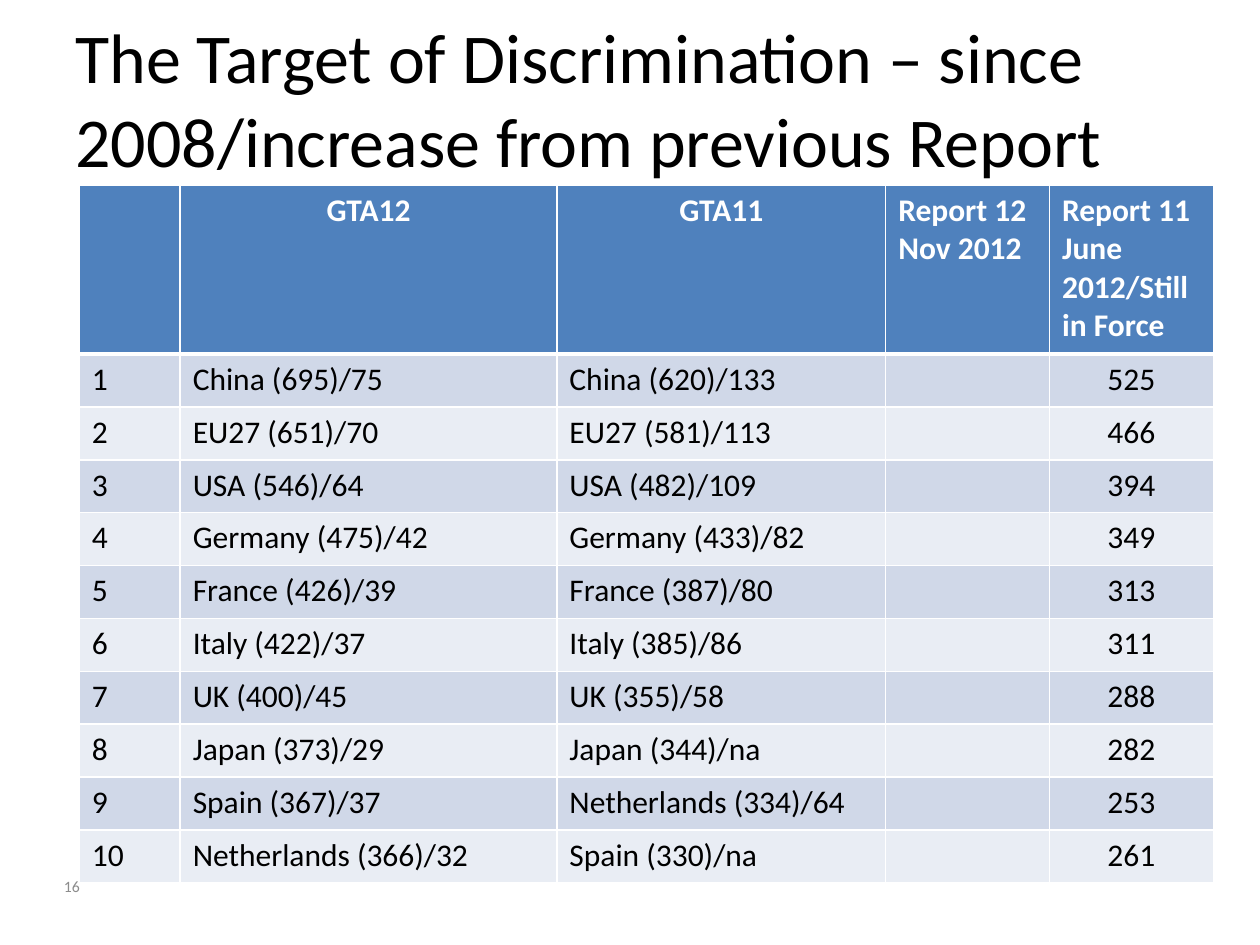
from lxml import etree
from pptx import Presentation
from pptx import util as u
from pptx.dml.color import RGBColor
from pptx.enum import text
from pptx.oxml.ns import qn

TITLE = "The Target of Discrimination – since 2008/increase from previous Report"
PAGE_NUMBER = "16"
HEADINGS = ["", "GTA12", "GTA11", "Report 12\nNov 2012",
            "Report 11 June 2012/Still in Force"]
TARGETS = [  # GTA12, GTA11, still in force
    ("China (695)/75", "China (620)/133", 525),
    ("EU27 (651)/70", "EU27 (581)/113", 466),
    ("USA (546)/64", "USA (482)/109", 394),
    ("Germany (475)/42", "Germany (433)/82", 349),
    ("France (426)/39", "France (387)/80", 313),
    ("Italy (422)/37", "Italy (385)/86", 311),
    ("UK (400)/45", "UK (355)/58", 288),
    ("Japan (373)/29", "Japan (344)/na", 282),
    ("Spain (367)/37", "Netherlands (334)/64", 253),
    ("Netherlands (366)/32", "Spain (330)/na", 261),
]
COLORS = {"text": "000000", "heading": "FFFFFF", "border": "FFFFFF",
          "header": "4F81BD", "odd": "D0D8E8", "even": "E9EDF4",
          "number": "8C8C8C"}
COLUMN_WIDTHS = [0.8, 2.99, 2.61, 1.3, 1.3]
HEADER_HEIGHT, ROW_HEIGHT = 1.34, 0.42
HEADING_CENTERED, BODY_CENTERED = {1, 2}, {4}
CENTER = text.PP_ALIGN.CENTER


def write(frame, content, size=18, color="text", bold=False, align=None):
    frame.word_wrap = True
    frame.text = content
    for paragraph in frame.paragraphs:
        paragraph.alignment = align
        font = paragraph.font
        font.name, font.size, font.bold = "Calibri", u.Pt(size), bold
        font.color.rgb = RGBColor.from_string(COLORS[color])
        for run in paragraph.runs:
            run.font.name, run.font.size, run.font.bold = "Calibri", u.Pt(size), bold
            run.font.color.rgb = RGBColor.from_string(COLORS[color])


def add_label(slide, box, content, **style):
    label = slide.shapes.add_textbox(*map(u.Inches, box))
    label.text_frame.vertical_anchor = text.MSO_ANCHOR.MIDDLE
    write(label.text_frame, content, **style)


def set_borders(cell, **widths):
    """Draw the L, R, T and B borders, 1 pt unless a width is given."""
    properties = cell._tc.get_or_add_tcPr()
    for place, side in enumerate("LRTB"):
        line = etree.Element(qn(f"a:ln{side}"), w=str(u.Pt(widths.get(side, 1))))
        fill = etree.SubElement(line, qn("a:solidFill"))
        etree.SubElement(fill, qn("a:srgbClr"), val=COLORS["border"])
        properties.insert(place, line)


def add_target_table(slide):
    rows = [HEADINGS] + [(str(rank), now, before, "", str(in_force))
                         for rank, (now, before, in_force) in enumerate(TARGETS, 1)]
    heights = [HEADER_HEIGHT] + [ROW_HEIGHT] * len(TARGETS)
    box = (0.63, 1.47, sum(COLUMN_WIDTHS), sum(heights))
    table = slide.shapes.add_table(len(rows), len(HEADINGS),
                                   *map(u.Inches, box)).table
    for column, width in zip(table.columns, COLUMN_WIDTHS):
        column.width = u.Inches(width)
    for r, (row, height) in enumerate(zip(rows, heights)):
        table.rows[r].height = u.Inches(height)
        is_header = r == 0
        band = "header" if is_header else "odd" if r % 2 else "even"
        centered = HEADING_CENTERED if is_header else BODY_CENTERED
        for c, content in enumerate(row):
            cell = table.cell(r, c)
            write(cell.text_frame, content, bold=is_header,
                  color="heading" if is_header else "text",
                  align=CENTER if c in centered else None)
            cell.fill.solid()
            cell.fill.fore_color.rgb = RGBColor.from_string(COLORS[band])
            set_borders(cell, T=3 if r == 1 else 1, B=3 if is_header else 1)


def main():
    deck = Presentation()
    deck.slide_width, deck.slide_height = u.Inches(10), u.Inches(7.5)
    slide = deck.slides.add_slide(deck.slide_layouts[6])
    add_label(slide, (0.5, 0, 9, 1.55), TITLE, size=40)
    add_target_table(slide)
    add_label(slide, (0.41, 6.83, 2.33, 0.4), PAGE_NUMBER, size=9, color="number")
    deck.save("out.pptx")


if __name__ == "__main__":
    main()
